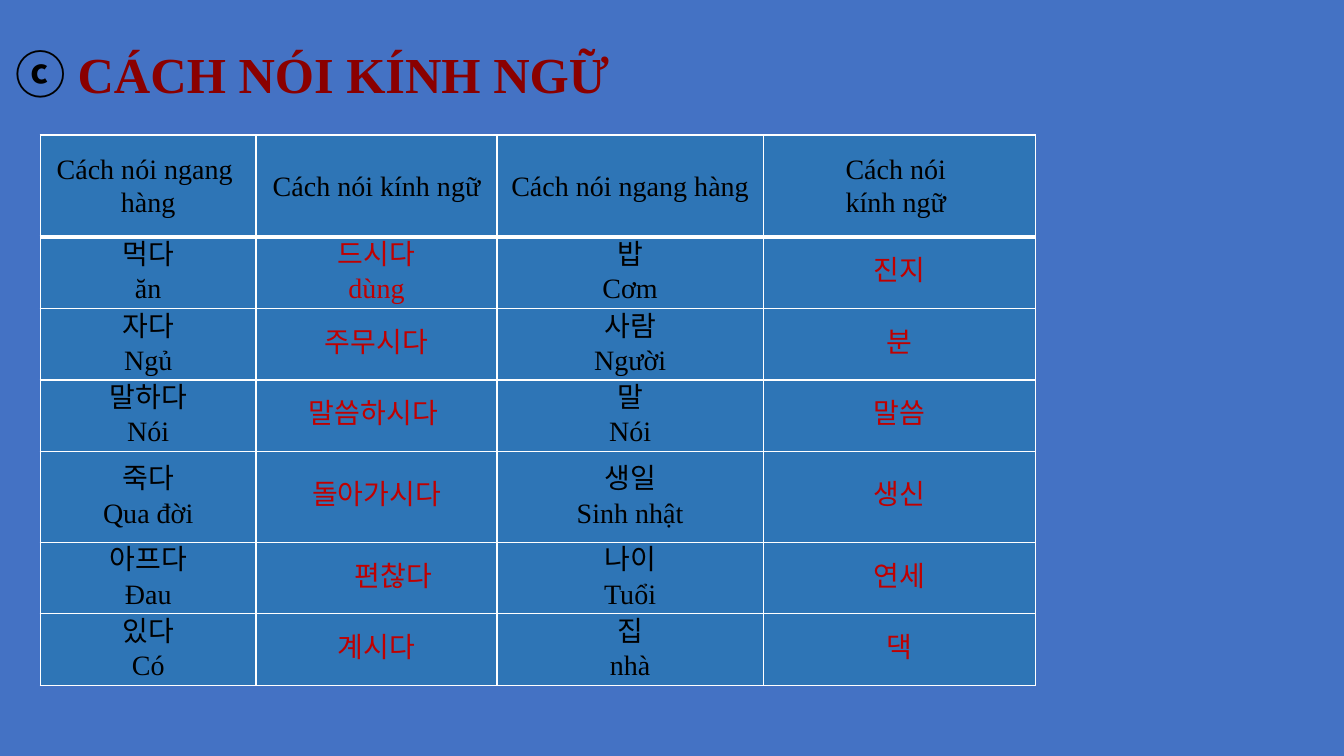
"""Build a slide comparing plain and honorific Korean words."""
from dataclasses import dataclass

from lxml.etree import SubElement
from pptx import Presentation
from pptx.dml.color import RGBColor
from pptx.enum.text import MSO_ANCHOR, MSO_AUTO_SIZE, PP_ALIGN
from pptx.oxml.ns import qn
from pptx.util import Inches, Pt

TITLE = [(" ", "korean", 18, False, "ink"),
         ("ⓒ ", "korean", 36, True, "ink"),
         ("CÁCH NÓI KÍNH NGỮ", "latin", 36, True, "title")]
HEADER = ("Cách nói ngang \nhàng", "Cách nói kính ngữ",
          "Cách nói ngang hàng", "Cách nói \nkính ngữ ")
WORDS = [
    ("먹다\năn", "드시다\ndùng", "밥\nCơm", "진지"),
    ("자다\nNgủ", "주무시다", "사람\nNgười", "분"),
    ("말하다\nNói", "말씀하시다 ", "말\nNói", "말씀"),
    ("죽다\nQua đời", "돌아가시다", "생일\nSinh nhật", "생신"),
    ("아프다\nĐau", "편찮다", "나이\nTuổi", "연세"),
    ("있다\nCó", "계시다", "집\nnhà", "댁"),
]
INDENTS = {"편찮다": 0.33}
COLUMNS = (2.14, 2.39, 2.64, 2.7)
ROWS = (1.01, 0.71, 0.71, 0.71, 0.9, 0.71, 0.71)


@dataclass(frozen=True)
class Theme:
    """Colours, fonts and sizes of the slide."""
    back: str = "4472C4"
    cell: str = "2E75B6"
    rule: str = "FFFFFF"
    ink: str = "000000"
    title: str = "8A0000"
    honorific: str = "C00000"
    latin: str = "Times New Roman"
    korean: str = "Noto Sans CJK KR"
    body: int = 20
    leading: int = 23
    thin: int = 1
    thick: int = 3


THEME = Theme()


def rgb(name):
    """Return a theme colour."""
    return RGBColor.from_string(getattr(THEME, name))


def set_all(obj, values):
    """Set attributes from a dict."""
    for key, value in values.items():
        setattr(obj, key, value)


def add_run(p, text, face, size, bold, color):
    """Add a run with one face for Latin and East Asian text."""
    r = p.add_run()
    r.text = text
    font = getattr(THEME, face)
    set_all(r.font, {"name": font, "size": Pt(size), "bold": bold})
    r.font.color.rgb = rgb(color)
    ea = SubElement(r.font._element, qn("a:ea"))
    ea.set("typeface", font)


def add_title(slide):
    """Place and fill the title."""
    sp = slide.shapes.title
    set_all(sp, {"left": 0, "top": Inches(0.34),
                 "width": Inches(6.29), "height": Inches(0.7)})
    tf = sp.text_frame
    set_all(tf, {"word_wrap": False, "vertical_anchor": MSO_ANCHOR.TOP,
                 "auto_size": MSO_AUTO_SIZE.SHAPE_TO_FIT_TEXT})
    p = tf.paragraphs[0]
    set_all(p, {"alignment": PP_ALIGN.JUSTIFY, "line_spacing": 1.07,
                "space_before": Pt(0), "space_after": Pt(8)})
    pPr = p._p.get_or_add_pPr()
    pPr.set("marL", str(Inches(0.5)))
    pPr.set("indent", str(Inches(-0.5)))
    for run in TITLE:
        add_run(p, *run)


def add_borders(cell, widths):
    """Draw the four sides of a cell."""
    tcPr = cell._tc.get_or_add_tcPr()
    for side, width in widths.items():
        ln = SubElement(tcPr, qn(f"a:ln{side}"), w=str(Pt(width)))
        fill = SubElement(ln, qn("a:solidFill"))
        SubElement(fill, qn("a:srgbClr"), val=THEME.rule)


def fill_cell(cell, text, row, col):
    """Format a cell and write its lines."""
    top = THEME.thick if row == 1 else THEME.thin
    bottom = THEME.thick if row == 0 else THEME.thin
    add_borders(cell, {"L": THEME.thin, "R": THEME.thin, "T": top, "B": bottom})
    cell.fill.solid()
    cell.fill.fore_color.rgb = rgb("cell")
    set_all(cell, {"vertical_anchor": MSO_ANCHOR.MIDDLE,
                   "margin_left": Inches(0.07), "margin_right": Inches(0.07),
                   "margin_top": 0, "margin_bottom": 0})
    color = "honorific" if row and col % 2 else "ink"
    tf = cell.text_frame
    for i, line in enumerate(text.split("\n")):
        p = tf.add_paragraph() if i else tf.paragraphs[0]
        set_all(p, {"alignment": PP_ALIGN.CENTER,
                    "line_spacing": Pt(THEME.leading)})
        if line in INDENTS:
            p._p.get_or_add_pPr().set("indent", str(Inches(INDENTS[line])))
        face = "korean" if "가" <= line[0] <= "힣" else "latin"
        add_run(p, line, face, THEME.body, False, color)


def add_words(slide):
    """Add the table of words."""
    frame = slide.shapes.add_table(
        len(ROWS), len(COLUMNS), Inches(0.4), Inches(1.34),
        Inches(sum(COLUMNS)), Inches(sum(ROWS)))
    table = frame.table
    set_all(table, {"first_row": False, "horz_banding": False})
    for column, width in zip(table.columns, COLUMNS):
        column.width = Inches(width)
    for row, height in zip(table.rows, ROWS):
        row.height = Inches(height)
    for r, texts in enumerate([HEADER, *WORDS]):
        for c, text in enumerate(texts):
            fill_cell(table.cell(r, c), text, r, c)


def main():
    """Build and save the slide."""
    prs = Presentation()
    set_all(prs, {"slide_width": Inches(13.33), "slide_height": Inches(7.5)})
    slide = prs.slides.add_slide(prs.slide_layouts[5])
    slide.background.fill.solid()
    slide.background.fill.fore_color.rgb = rgb("back")
    add_title(slide)
    add_words(slide)
    prs.save("out.pptx")


if __name__ == "__main__":
    main()
